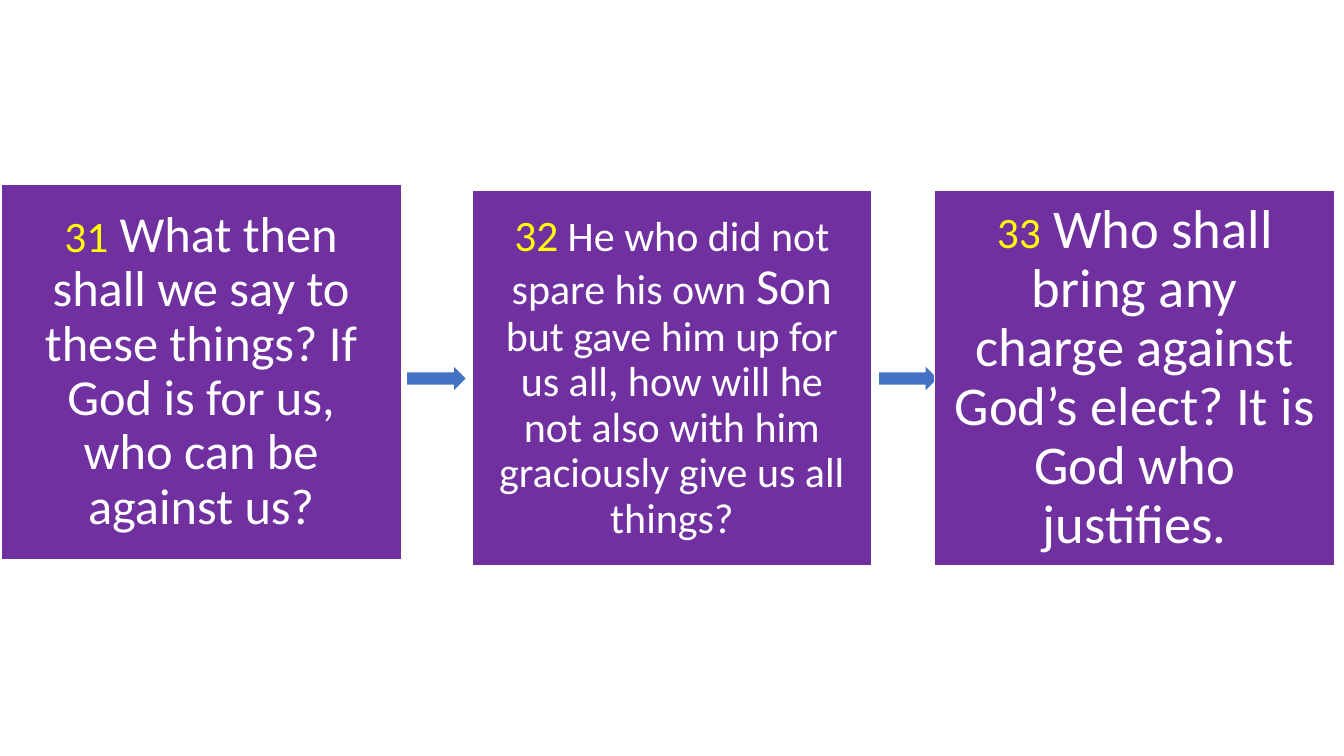
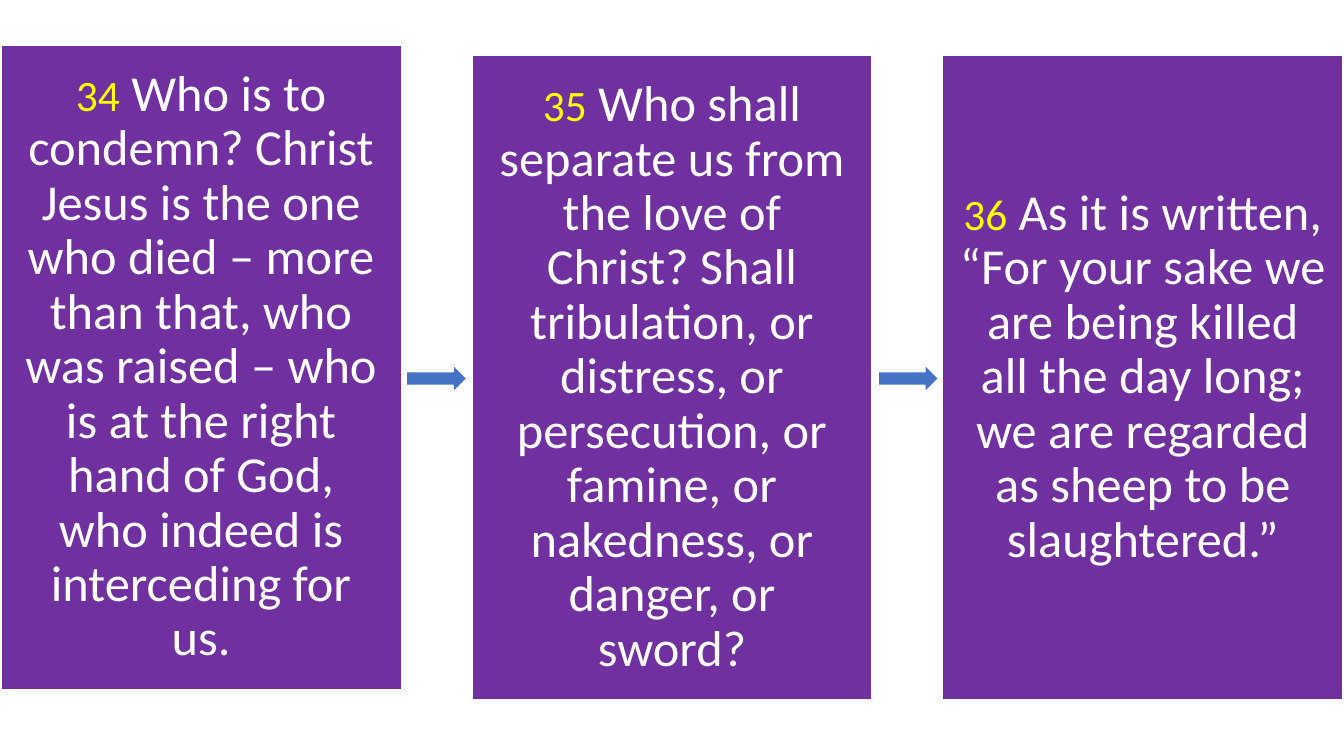
from pptx import Presentation
from pptx.dml.color import RGBColor
from pptx.enum.shapes import MSO_SHAPE
from pptx.enum.text import MSO_ANCHOR, PP_ALIGN
from pptx.util import Pt

RECT = MSO_SHAPE.RECTANGLE
ARROW = MSO_SHAPE.RIGHT_ARROW
MIDDLE = MSO_ANCHOR.MIDDLE
CENTER = PP_ALIGN.CENTER
SCALE = 9144


def px(n):
    return n * SCALE


def color(code):
    return RGBColor.from_string(code)


class Deck:
    font = "Calibri"
    purple = "7030A0"
    blue = "4472C4"
    white = "FFFFFF"
    yellow = "FFFF00"
    wide = 397
    inset = 17
    mark = 31

    def __init__(self):
        self.file = Presentation()
        self.file.slide_width = px(1333)
        self.file.slide_height = px(750)
        self.slide = None

    def page(self):
        blank = self.file.slide_layouts[6]
        self.slide = self.file.slides.add_slide(blank)

    def shape(self, kind, box, fill):
        item = self.slide.shapes.add_shape(kind, *map(px, box))
        item.shadow.inherit = False
        item.fill.solid()
        item.fill.fore_color.rgb = color(fill)
        item.line.color.rgb = color(self.white)
        item.line.width = Pt(1)
        return item

    def run(self, para, text, size, tint):
        part = para.add_run()
        part.text = text
        part.font.name = self.font
        part.font.size = Pt(size)
        part.font.color.rgb = color(tint)

    def verse(self, left, top, tall, mark, parts):
        card = self.shape(RECT, (left, top, self.wide, tall), self.purple)
        frame = card.text_frame
        frame.word_wrap = True
        frame.vertical_anchor = MIDDLE
        frame.margin_left = frame.margin_right = px(self.inset)
        frame.margin_top = frame.margin_bottom = px(self.inset)
        para = frame.paragraphs[0]
        para.alignment = CENTER
        para.line_spacing = 0.9
        self.run(para, mark, self.mark, self.yellow)
        for text, size in parts:
            self.run(para, text, size, self.white)

    def arrow(self, left):
        self.shape(ARROW, (left, 362, 60, 27), self.blue)


PAGES = [
    (372, [
        (1, 183, "31", [
            (" What then shall we say to these things? If God is for us, "
             "who can be against us?", 36)]),
        (468, 189, "32", [
            (" He who did not spare his own ", 30),
            ("Son", 36),
            (" but gave him up for us all, how will he not also with him "
             "graciously give us all things?", 30)]),
        (927, 189, "33", [
            (" Who shall bring any charge against God’s elect? "
             "It is God who justifies.", 39)]),
    ]),
    (639, [
        (1, 45, "34", [
            (" Who is to condemn? Christ Jesus is the one who died – more "
             "than that, who was raised – who is at the right hand of God, "
             "who indeed is interceding for us.", 36)]),
        (468, 55, "35", [
            (" Who shall separate us from the love of Christ? Shall "
             "tribulation, or distress, or persecution, or famine, or "
             "nakedness, or danger, or sword?", 36)]),
        (935, 55, "36", [
            (" As it is written, “For your sake we are being killed all the "
             "day long; we are regarded as sheep to be slaughtered.”", 36)]),
    ]),
]


def main():
    deck = Deck()
    for tall, cards in PAGES:
        deck.page()
        for left in (403, 871):
            deck.arrow(left)
        for left, top, mark, parts in cards:
            deck.verse(left, top, tall, mark, parts)
    deck.file.save("out.pptx")


if __name__ == "__main__":
    main()
